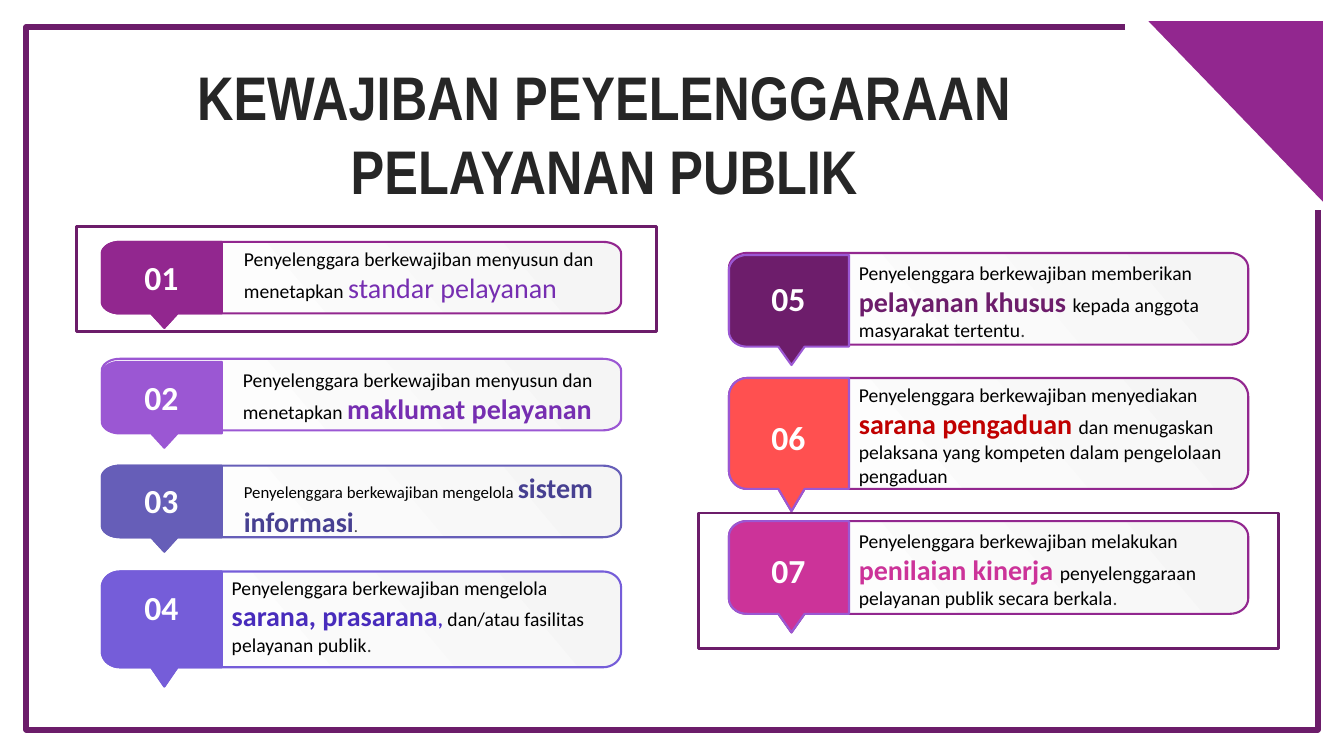
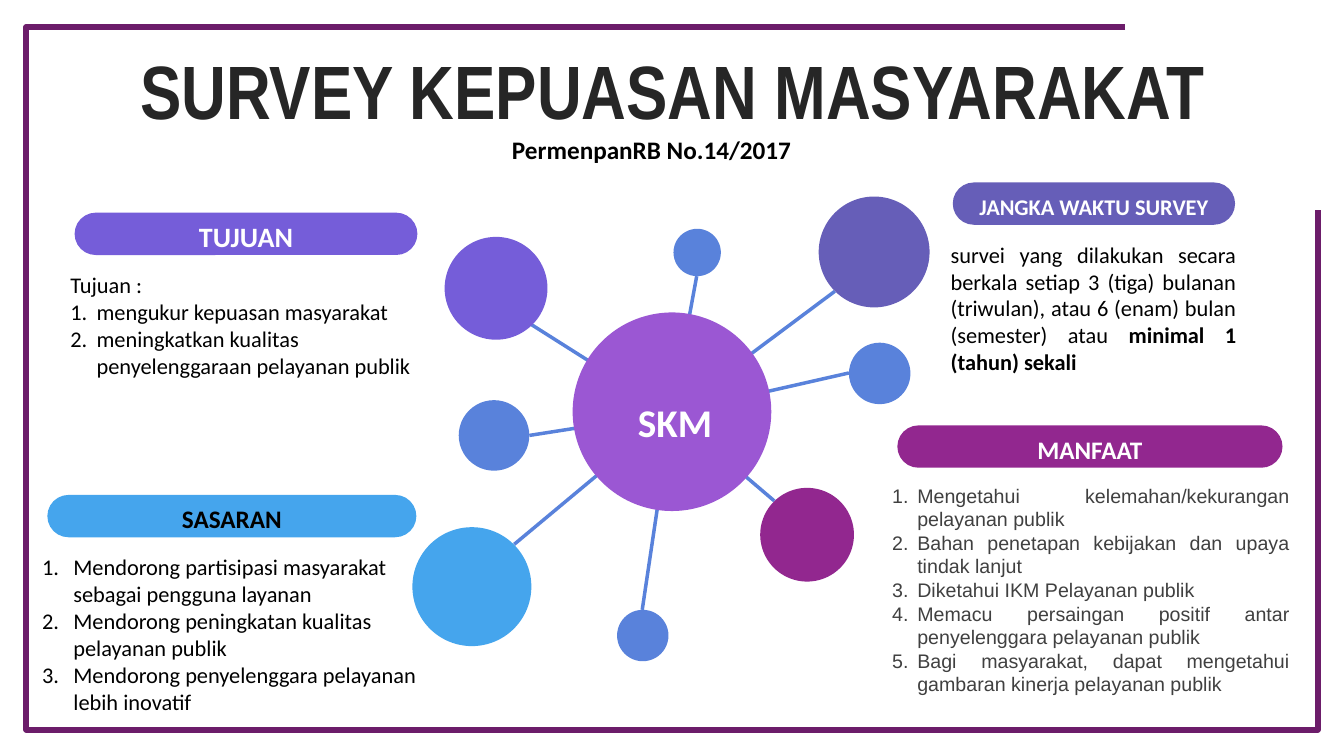
import math
from dataclasses import dataclass

from lxml import etree
from pptx import Presentation
from pptx.dml.color import RGBColor
from pptx.enum import shapes as kinds, text as txt
from pptx.oxml.ns import qn
from pptx.util import Inches, Pt

WHITE = RGBColor(0xFF, 0xFF, 0xFF)
BLACK = RGBColor(0x00, 0x00, 0x00)
INK = RGBColor(0x26, 0x26, 0x26)
GREY = RGBColor(0x40, 0x40, 0x40)
PALE = RGBColor(0xF5, 0xF5, 0xF5)
FRAME = RGBColor(0x6C, 0x1D, 0x6A)
PLUM = RGBColor(0x6D, 0x1D, 0x6B)
PURPLE = RGBColor(0x92, 0x27, 0x8F)
ORCHID = RGBColor(0x9B, 0x57, 0xD3)
SLATE = RGBColor(0x66, 0x5E, 0xB8)
VIOLET = RGBColor(0x75, 0x5D, 0xD9)
CORAL = RGBColor(0xFF, 0x50, 0x50)
PINK = RGBColor(0xCC, 0x33, 0x99)
SKY = RGBColor(0x45, 0xA5, 0xED)
BLUE = RGBColor(0x59, 0x82, 0xDB)
DEEP_VIOLET = RGBColor(0x76, 0x2E, 0xB1)
DEEP_SLATE = RGBColor(0x47, 0x40, 0x91)
INDIGO = RGBColor(0x48, 0x2C, 0xBC)
RED = RGBColor(0xC0, 0x00, 0x00)

ALIGN = txt.PP_ALIGN
PRESET = kinds.MSO_SHAPE


@dataclass
class Span:
    text: str
    size: float = 14
    color: RGBColor = BLACK
    bold: bool = False
    font: str = "Calibri"


@dataclass
class Duty:
    number: str
    color: RGBColor
    left: float
    top: float
    height: float
    number_top: float
    text_box: tuple
    spans: list
    card_line: RGBColor = PURPLE
    badge_line: RGBColor = ORCHID
    badge_drop: float = 0


def callout_points(left, top, width, height, round_right):
    """Outline of a box with elliptical corners and a pointer under its left part."""
    rx, ry = 0.18, 0.165 * height
    right, bottom = left + width, top + height

    def corner(cx, cy, start):
        angles = [math.radians(start + 10 * step) for step in range(10)]
        return [(cx + rx * math.cos(a), cy + ry * math.sin(a)) for a in angles]

    pointer = [(left + 0.75, bottom), (left + 0.62, top + 1.2 * height), (left + 0.49, bottom)]
    if round_right:
        right_side = corner(right - rx, top + ry, 270) + corner(right - rx, bottom - ry, 0)
    else:
        right_side = [(right, top), (right, bottom)]
    return (right_side + pointer + corner(left + rx, bottom - ry, 90)
            + corner(left + rx, top + ry, 180))


class Deck:
    """Holds the presentation, its shared style and the slide being built."""

    def __init__(self):
        self.prs = Presentation()
        self.prs.slide_width, self.prs.slide_height = Inches(13.33), Inches(7.5)
        self.slide = None

    def new_slide(self, title, size, left, top, width):
        self.slide = self.prs.slides.add_slide(self.prs.slide_layouts[5])
        heading = self.slide.shapes.title
        heading.left, heading.top = Inches(left), Inches(top)
        heading.width, heading.height = Inches(width), Inches(0.79)
        frame = heading.text_frame
        frame.auto_size = txt.MSO_AUTO_SIZE.NONE
        frame.vertical_anchor = txt.MSO_ANCHOR.MIDDLE
        frame.margin_left = frame.margin_right = Inches(0.13)
        frame.margin_top = frame.margin_bottom = Inches(0.07)
        self.fill_text(frame, [[Span(title, size, INK, True, "Arial Narrow")]], ALIGN.CENTER)
        border = [(11.16, 0.27), (0.26, 0.27), (0.26, 7.24), (13.07, 7.24), (13.07, 2.08)]
        self.outline(border, line=FRAME, line_width=4, close=False)

    def fill_text(self, frame, paragraphs, align=ALIGN.LEFT, indent=0, first_numbered=0):
        """Fill a frame with lists of spans; an indent numbers the paragraphs."""
        for index, spans in enumerate(paragraphs):
            paragraph = frame.paragraphs[0] if index == 0 else frame.add_paragraph()
            paragraph.alignment = align
            for span in spans:
                run = paragraph.add_run()
                run.text = span.text
                run.font.size, run.font.bold = Pt(span.size), span.bold
                run.font.name, run.font.color.rgb = span.font, span.color
            if indent and index >= first_numbered:
                props = paragraph._p.get_or_add_pPr()
                props.set("marL", str(Inches(indent)))
                props.set("indent", str(-Inches(indent)))
                etree.SubElement(props, qn("a:buAutoNum"), type="arabicPeriod")

    def text(self, box, paragraphs, **style):
        frame = self.slide.shapes.add_textbox(*map(Inches, box)).text_frame
        frame.word_wrap = True
        self.fill_text(frame, paragraphs, **style)

    def paint(self, shape, fill, line, line_width):
        shape.shadow.inherit = False
        if fill is None:
            shape.fill.background()
        else:
            shape.fill.solid()
            shape.fill.fore_color.rgb = fill
        if line is None:
            shape.line.fill.background()
        else:
            shape.line.color.rgb = line
            shape.line.width = Pt(line_width)
        return shape

    def preset(self, kind, box, fill=None, line=None):
        shape = self.slide.shapes.add_shape(kind, *map(Inches, box))
        return self.paint(shape, fill, line, 2)

    def outline(self, points, fill=None, line=None, line_width=1.5, close=True):
        corners = [(Inches(x), Inches(y)) for x, y in points]
        builder = self.slide.shapes.build_freeform(*corners[0])
        builder.add_line_segments(corners[1:], close=close)
        return self.paint(builder.convert_to_shape(), fill, line, line_width)

    def label(self, shape, span, push_down, push_right=0):
        frame = shape.text_frame
        frame.word_wrap = True
        frame.vertical_anchor = txt.MSO_ANCHOR.MIDDLE
        frame.margin_left, frame.margin_right = Inches(push_right), 0
        frame.margin_top, frame.margin_bottom = Inches(push_down), 0
        self.fill_text(frame, [[span]], ALIGN.CENTER)

    def pill(self, box, fill, span):
        pill = self.preset(PRESET.ROUNDED_RECTANGLE, box, fill)
        pill.adjustments[0] = 0.5
        self.label(pill, span, 0.05)

    def spoke(self, start, end):
        line = self.slide.shapes.add_connector(
            kinds.MSO_CONNECTOR.STRAIGHT, *map(Inches, start + end))
        line.line.color.rgb, line.line.width = BLUE, Pt(2.5)
        etree.SubElement(line._element.spPr, qn("a:effectLst"))

    def circle(self, left, top, size, fill):
        return self.preset(PRESET.OVAL, (left, top, size, size), fill)

    def duty(self, duty):
        card = self.outline(callout_points(duty.left, duty.top, 5.15, duty.height, True),
                            WHITE, duty.card_line)
        card.fill.gradient()
        card.fill.gradient_angle = 220
        for stop, color in zip(card.fill.gradient_stops, (PALE, WHITE)):
            stop.color.rgb = color
        badge_top = duty.top + duty.badge_drop
        self.outline(callout_points(duty.left, badge_top, 1.19, duty.height, False),
                     duty.color, duty.badge_line)
        self.text((duty.left + 0.2, duty.number_top, 0.78, 0.5),
                  [[Span(duty.number, 24, WHITE, True)]], align=ALIGN.CENTER)
        self.text(duty.text_box, [duty.spans])


def key(text, color, bold=True):
    return Span(text, 20, color, bold)


def left_duty(number, color, top, height, number_top, text_box, spans, drop=0):
    return Duty(number, color, 1.01, top, height, number_top, text_box, spans,
                color, color, drop)


def right_duty(number, color, top, height, number_top, text_top, spans, drop=0):
    return Duty(number, color, 7.23, top, height, number_top,
                (8.42, text_top, 3.96, height), spans, badge_drop=drop)


def duties_slide(deck):
    deck.new_slide("KEWAJIBAN PEYELENGGARAAN PELAYANAN PUBLIK", 44, 0.6, 0.92, 10.79)
    opening = "Penyelenggara berkewajiban "
    stop = Span(".", color=GREY)
    duties = [
        left_duty("01", PURPLE, 2.4, 0.71, 2.5, (2.32, 2.4, 3.68, 0.67),
                  [Span(opening + "menyusun dan menetapkan "),
                   key("standar pelayanan", DEEP_VIOLET, False)]),
        left_duty("02", ORCHID, 3.56, 0.71, 3.69, (2.31, 3.6, 3.68, 0.67),
                  [Span(opening + "menyusun dan menetapkan "),
                   key("maklumat pelayanan", DEEP_VIOLET)], 0.03),
        left_duty("03", SLATE, 4.62, 0.71, 4.71, (2.32, 4.62, 3.68, 0.77),
                  [Span(opening + "mengelola ", 12),
                   key("sistem informasi", DEEP_SLATE), Span(".", 12, GREY)]),
        left_duty("04", VIOLET, 5.67, 0.95, 5.77, (2.2, 5.66, 4.12, 1.14),
                  [Span(opening + "mengelola "), key("sarana, prasarana", INDIGO),
                   Span(",", color=INDIGO, bold=True),
                   Span(" dan/atau fasilitas pelayanan publik"), stop]),
        right_duty("05", PLUM, 2.51, 0.91, 2.71, 2.54,
                   [Span(opening + "memberikan "), key("pelayanan khusus ", PLUM),
                    Span("kepada anggota masyarakat tertentu"), stop], 0.02),
        right_duty("06", CORAL, 3.75, 1.1, 4.09, 3.75,
                   [Span(opening + "menyediakan "), key("sarana pengaduan ", RED),
                    Span("dan menugaskan pelaksana yang kompeten dalam pengelolaan pengaduan")]),
        right_duty("07", PINK, 5.17, 0.92, 5.41, 5.2,
                   [Span(opening + "melakukan "), key("penilaian kinerja ", PINK),
                    Span("penyelenggaraan pelayanan publik secara berkala"), stop]),
    ]
    for duty in duties:
        deck.duty(duty)
    corner = deck.preset(PRESET.RIGHT_TRIANGLE, (11.39, 0.21, 1.73, 1.79), PURPLE)
    corner.rotation = 180
    for highlight in ((0.76, 2.25, 5.75, 1.04), (6.93, 5.09, 5.75, 1.34)):
        deck.preset(PRESET.RECTANGLE, highlight, line=FRAME)


def survey_slide(deck):
    deck.new_slide("SURVEY KEPUASAN MASYARAKAT", 54, 0.35, 0.49, 12.65)
    deck.text((4.98, 1.28, 3.2, 0.4), [[Span("PermenpanRB No.14/2017", 18, bold=True)]])

    # Each satellite: left, top, diameter, colour, outer end of its spoke
    satellites = [
        (8.12, 1.95, 1.1, SLATE, (8.28, 2.89)),
        (4.41, 2.35, 1.02, VIOLET, (5.27, 3.22)),
        (4.09, 5.23, 1.18, SKY, (5.1, 5.4)),
        (7.54, 4.84, 0.93, PURPLE, (7.68, 4.97)),
        (8.42, 3.4, 0.61, BLUE, (8.42, 3.7)),
        (4.55, 3.97, 0.7, BLUE, (5.25, 4.32)),
        (6.12, 6.05, 0.51, BLUE, (6.37, 6.05)),
        (6.68, 2.27, 0.47, BLUE, (6.91, 2.74)),
    ]
    for *_, spoke_end in satellites:
        deck.spoke((6.66, 4.1), spoke_end)
    hub = deck.circle(5.68, 3.1, 1.97, ORCHID)
    deck.label(hub, Span("SKM", 28, WHITE, True), 0.2, 0.06)
    for left, top, size, color, _ in satellites:
        deck.circle(left, top, size, color)

    deck.pill((0.74, 2.11, 3.4, 0.42), VIOLET, Span("TUJUAN", 20, WHITE, True))
    goals = ["Tujuan :", "mengukur kepuasan masyarakat",
             "meningkatkan kualitas penyelenggaraan pelayanan publik"]
    deck.text((0.6, 2.64, 3.68, 1.18), [[Span(goal, 16)] for goal in goals],
              indent=0.26, first_numbered=1)

    deck.pill((0.47, 4.91, 3.66, 0.42), SKY, Span("SASARAN", 18, BLACK, True))
    targets = ["Mendorong partisipasi masyarakat sebagai pengguna layanan",
               "Mendorong peningkatan kualitas pelayanan publik",
               "Mendorong penyelenggara pelayanan lebih inovatif"]
    deck.text((0.32, 5.44, 3.96, 1.75), [[Span(target, 16)] for target in targets], indent=0.31)

    deck.pill((9.45, 1.81, 2.8, 0.42), SLATE, Span("JANGKA WAKTU SURVEY", 16, WHITE, True))
    period = [Span("survei yang dilakukan secara berkala setiap 3 (tiga) bulanan (triwulan), "
                   "atau 6 (enam) bulan (semester) atau ", 16),
              Span("minimal 1 (tahun) sekali", 16, bold=True)]
    deck.text((9.33, 2.34, 3.03, 1.45), [period], align=ALIGN.JUSTIFY)

    deck.pill((8.9, 4.22, 3.82, 0.42), PURPLE, Span("MANFAAT", 18, WHITE, True))
    benefits = ["Mengetahui kelemahan/kekurangan pelayanan publik",
                "Bahan penetapan kebijakan dan upaya tindak lanjut",
                "Diketahui IKM Pelayanan publik",
                "Memacu persaingan positif antar penyelenggara pelayanan publik",
                "Bagi masyarakat, dapat mengetahui gambaran kinerja pelayanan publik"]
    deck.text((8.75, 4.75, 4.14, 2.22),
              [[Span(benefit, 14, GREY, font="Arial")] for benefit in benefits],
              align=ALIGN.JUSTIFY, indent=0.25)


def main():
    deck = Deck()
    duties_slide(deck)
    survey_slide(deck)
    deck.prs.save("out.pptx")


if __name__ == "__main__":
    main()
